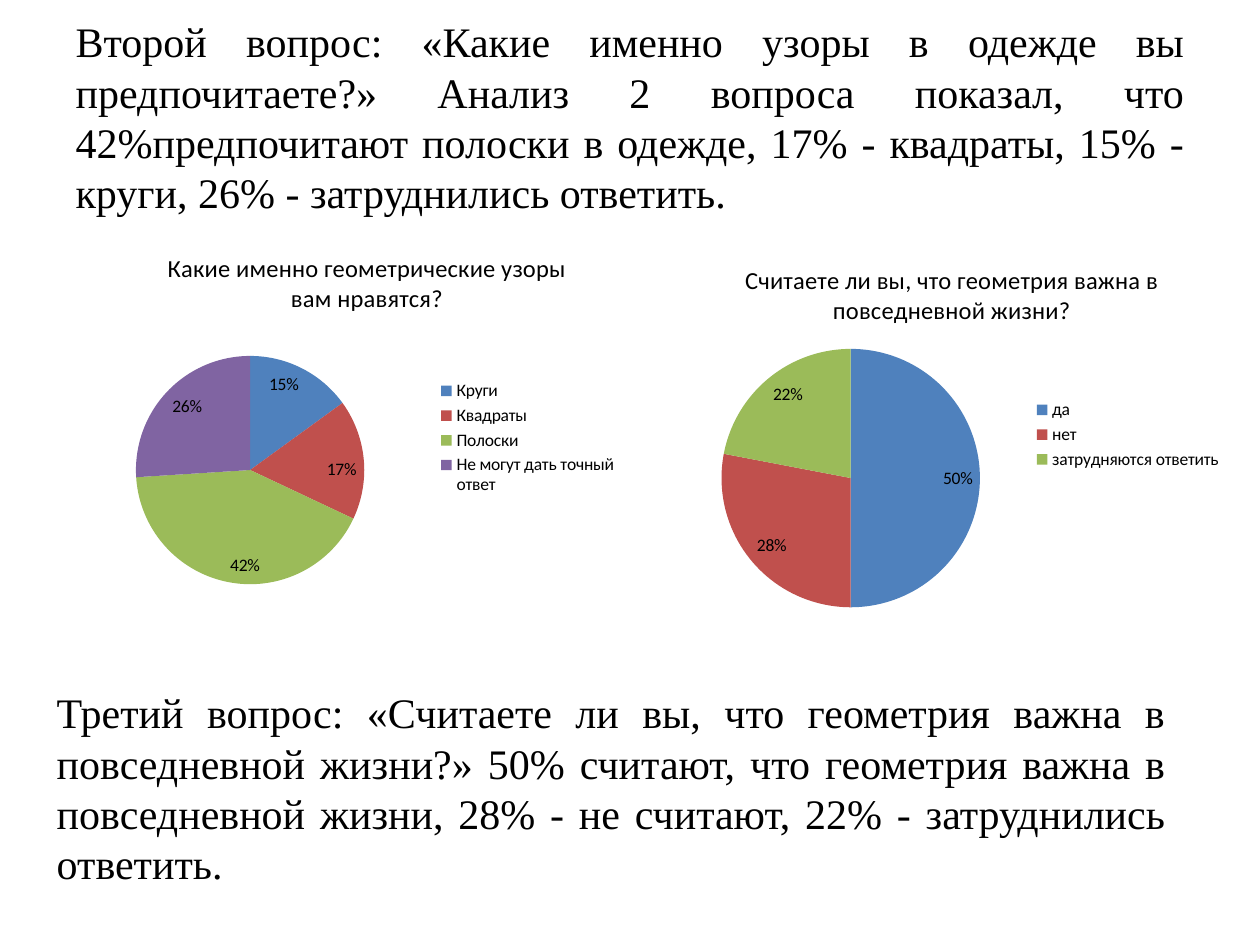
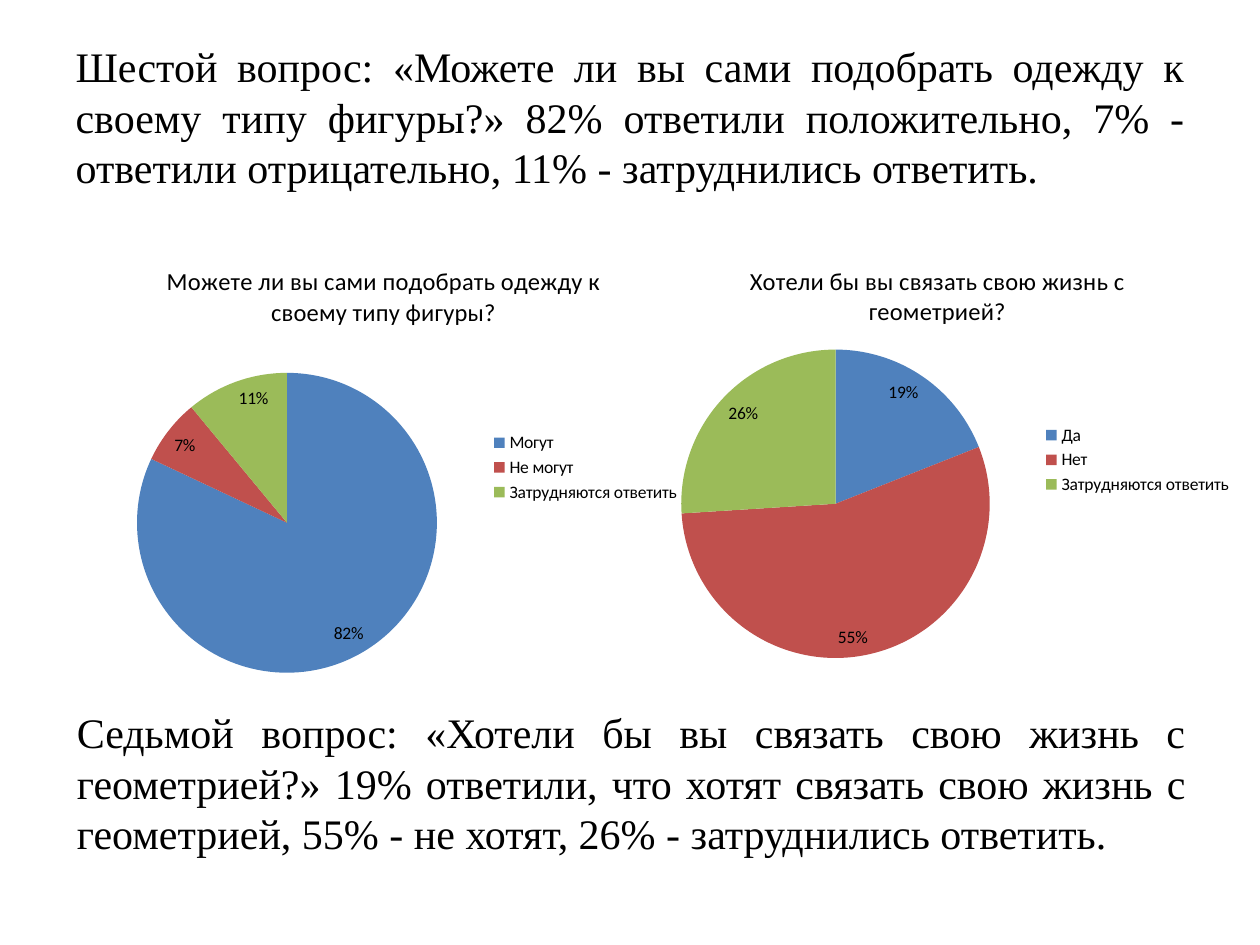
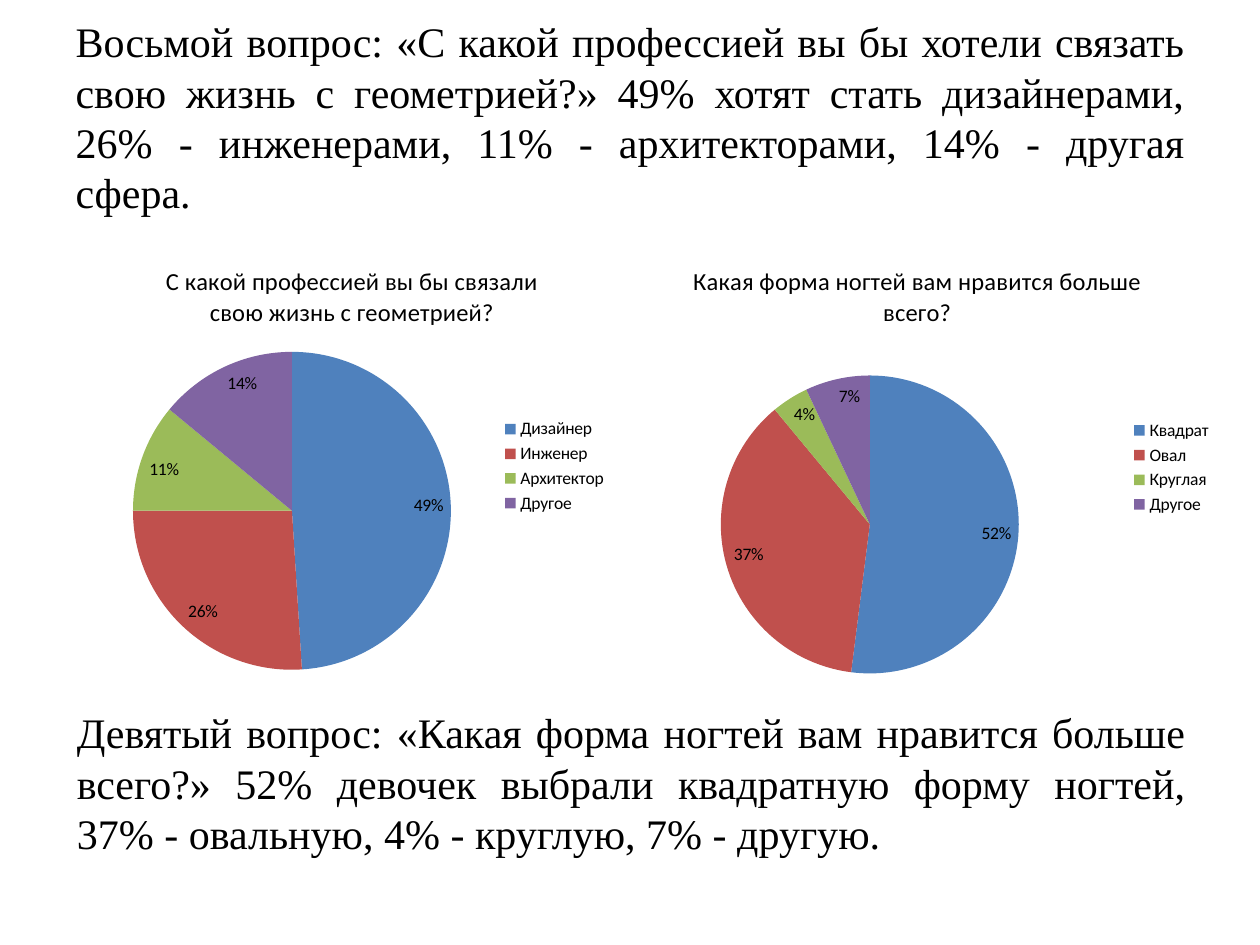
import dataclasses

import pptx
import pptx.chart.data
import pptx.dml.color
import pptx.enum.chart
import pptx.enum.text
import pptx.oxml
import pptx.oxml.ns
import pptx.util

Pt = pptx.util.Pt
qn = pptx.oxml.ns.qn


@dataclasses.dataclass(frozen=True)
class Theme:
    text_font: str = "Times New Roman"
    chart_font: str = "Calibri"
    text_size: int = 24
    chart_title_size: int = 14
    chart_size: int = 10
    text_color: str = "000000"
    slice_colors: tuple = ("4F81BD", "C0504D", "9BBB59", "8064A2")
    title_box: tuple = (36, 21.6, 648, 90)


@dataclasses.dataclass(frozen=True)
class PieQuestion:
    """One survey question; box is left, top, width, height and pie is left, top, diameter."""
    title: str
    answers: dict
    box: tuple
    pie: tuple
    title_offset: tuple = ()


THEME = Theme()


def color(value):
    return pptx.dml.color.RGBColor.from_string(value)


def style_font(font, name, size):
    font.name = name
    font.size = Pt(size)
    font.bold = False
    font.color.rgb = color(THEME.text_color)


def place(shape, box):
    shape.left, shape.top, shape.width, shape.height = map(Pt, box)


def fill_placeholder(shape, text, box):
    place(shape, box)
    frame = shape.text_frame
    frame.word_wrap = True
    frame.auto_size = pptx.enum.text.MSO_AUTO_SIZE.NONE
    paragraph = frame.paragraphs[0]
    paragraph.alignment = pptx.enum.text.PP_ALIGN.JUSTIFY
    run = paragraph.add_run()
    run.text = text
    style_font(run.font, THEME.text_font, THEME.text_size)
    return paragraph


def remove_bullet(paragraph):
    properties = paragraph._p.get_or_add_pPr()
    properties.set("marL", "0")
    properties.set("indent", "0")
    pptx.oxml.ns.qn("a:buNone")
    properties.append(properties.makeelement(qn("a:buNone"), {}))


def set_layout(element, position, settings):
    """Give a chart part a manual layout, stored as its child at the given position."""
    for old_layout in element.findall(qn("c:layout")):
        element.remove(old_layout)
    layout = element.makeelement(qn("c:layout"), {})
    manual = layout.makeelement(qn("c:manualLayout"), {})
    layout.append(manual)
    for name, value in settings.items():
        manual.append(manual.makeelement(qn(f"c:{name}"), {"val": str(value)}))
    element.insert(position, layout)


def set_pie_area(chart, question):
    left, top, width, height = question.box
    pie_left, pie_top, diameter = question.pie
    set_layout(chart.element.find(".//" + qn("c:plotArea")), 0, {
        "layoutTarget": "inner", "xMode": "edge", "yMode": "edge",
        "x": (pie_left - left) / width, "y": (pie_top - top) / height,
        "w": diameter / width, "h": diameter / height,
    })


def add_chart_title(chart, question):
    chart.has_title = True
    run = chart.chart_title.text_frame.paragraphs[0].add_run()
    run.text = question.title
    style_font(run.font, THEME.chart_font, THEME.chart_title_size)
    if question.title_offset:
        x, y = question.title_offset
        set_layout(chart.chart_title.element, 1,
                   {"xMode": "edge", "yMode": "edge", "x": x, "y": y})


def add_pie(slide, question):
    data = pptx.chart.data.CategoryChartData()
    data.categories = list(question.answers)
    data.add_series("Series 1", list(question.answers.values()))
    chart = slide.shapes.add_chart(
        pptx.enum.chart.XL_CHART_TYPE.PIE, *map(Pt, question.box), data).chart
    style_font(chart.font, THEME.chart_font, THEME.chart_size)
    add_chart_title(chart, question)
    set_pie_area(chart, question)

    chart.has_legend = True
    chart.legend.position = pptx.enum.chart.XL_LEGEND_POSITION.RIGHT
    chart.legend.include_in_layout = False

    plot = chart.plots[0]
    plot.vary_by_categories = True
    for index in range(len(question.answers)):
        fill = plot.series[0].points[index].format.fill
        fill.solid()
        fill.fore_color.rgb = color(THEME.slice_colors[index])

    plot.has_data_labels = True
    labels = plot.data_labels
    labels.show_percentage = True
    labels.show_value = False
    labels.number_format = "0%"
    labels.number_format_is_linked = False
    labels.position = pptx.enum.chart.XL_LABEL_POSITION.INSIDE_END
    style_font(labels.font, THEME.chart_font, THEME.chart_size)


def add_survey_slide(presentation, title, body, body_box, questions):
    slide = presentation.slides.add_slide(presentation.slide_layouts[1])
    fill_placeholder(slide.shapes.title, title, THEME.title_box)
    remove_bullet(fill_placeholder(slide.placeholders[1], body, body_box))
    for question in questions:
        add_pie(slide, question)


def main():
    presentation = pptx.Presentation()
    presentation.slide_width = Pt(720)
    presentation.slide_height = Pt(540)

    add_survey_slide(
        presentation,
        "Второй вопрос: «Какие именно узоры в одежде вы предпочитаете?» Анализ 2 вопроса "
        "показал, что 42%предпочитают полоски в одежде, 17% - квадраты, 15% - круги, "
        "26% - затруднились ответить.",
        "Третий вопрос: «Считаете ли вы, что геометрия важна в повседневной жизни?» "
        "50% считают, что геометрия важна в повседневной жизни, 28% - не считают, "
        "22% - затруднились ответить.",
        (25.2, 388.8, 648, 121.7),
        [
            PieQuestion(
                "Какие именно геометрические узоры вам нравятся?",
                {"Круги": 15, "Квадраты": 17, "Полоски": 42, "Не могут дать точный ответ": 26},
                (42.5, 133.9, 317.5, 232.6), (77.7, 203.4, 130.5), (0.16, 0.03)),
            PieQuestion(
                "Считаете ли вы, что геометрия важна в повседневной жизни?",
                {"да": 50, "нет": 28, "затрудняются ответить": 22},
                (382.3, 139.7, 323.3, 217.4), (412.3, 199.4, 147.7)),
        ])

    add_survey_slide(
        presentation,
        "Шестой вопрос: «Можете ли вы сами подобрать одежду к своему типу фигуры?» "
        "82% ответили положительно, 7% - ответили отрицательно, "
        "11% - затруднились ответить.",
        "Седьмой вопрос: «Хотели бы вы связать свою жизнь с геометрией?» 19% ответили, "
        "что хотят связать свою жизнь с геометрией, 55% - не хотят, "
        "26% - затруднились ответить.",
        (36.7, 400.3, 648, 110.2),
        [
            PieQuestion(
                "Можете ли вы сами подобрать одежду к своему типу фигуры?",
                {"Могут": 82, "Не могут": 7, "Затрудняются ответить": 11},
                (42.5, 139.7, 353.5, 254.9), (78.3, 213.1, 171.4)),
            PieQuestion(
                "Хотели бы вы связать свою жизнь с геометрией?",
                {"Да": 19, "Нет": 55, "Затрудняются ответить": 26},
                (360, 139.7, 351.4, 246.2), (389.3, 199.8, 176.3)),
        ])

    add_survey_slide(
        presentation,
        "Восьмой вопрос: «С какой профессией вы бы хотели связать свою жизнь с "
        "геометрией?» 49% хотят стать дизайнерами, 26% - инженерами, "
        "11% - архитекторами, 14% - другая сфера.",
        "Девятый вопрос: «Какая форма ногтей вам нравится больше всего?» 52% девочек "
        "выбрали квадратную форму ногтей, 37% - овальную, 4% - круглую, 7% - другую.",
        (36.7, 400.3, 648, 98.6),
        [
            PieQuestion(
                "С какой профессией вы бы связали свою жизнь с геометрией?",
                {"Дизайнер": 49, "Инженер": 26, "Архитектор": 11, "Другое": 14},
                (48.2, 139.7, 306, 253.4), (76, 201.1, 181.7)),
            PieQuestion(
                "Какая форма ногтей вам нравится больше всего?",
                {"Квадрат": 52, "Овал": 37, "Круглая": 4, "Другое": 7},
                (348.5, 139.7, 351.4, 254.9), (411.9, 214.6, 170.3)),
        ])

    presentation.save("out.pptx")


if __name__ == "__main__":
    main()
